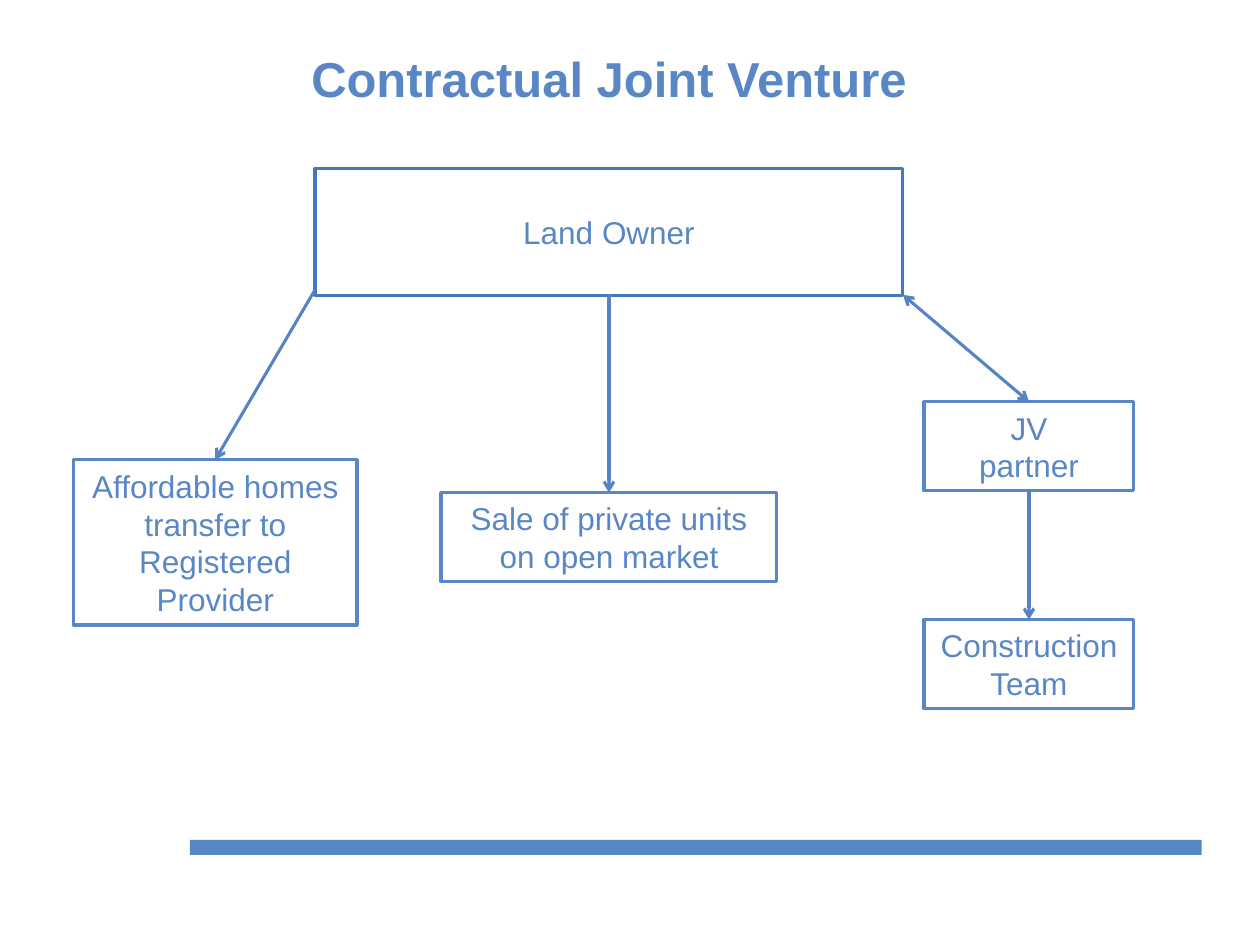
from dataclasses import dataclass
from typing import Optional

from lxml.etree import SubElement
from pptx import Presentation
from pptx.dml.color import RGBColor
from pptx.enum.shapes import MSO_CONNECTOR, MSO_SHAPE
from pptx.enum.text import MSO_ANCHOR, PP_ALIGN
from pptx.oxml.ns import qn
from pptx.util import Pt

TOP, BOTTOM = 0, 2  # connection sites of a rectangle


@dataclass(frozen=True)
class Theme:
    blue: RGBColor = RGBColor(0x59, 0x87, 0xC5)
    owner_line: RGBColor = RGBColor(0x43, 0x77, 0xBE)
    arrow: RGBColor = RGBColor(0x54, 0x84, 0xC3)
    font: str = "Arial"
    title_size: float = 28
    label_size: float = 18
    line_width: float = 1.75


THEME = Theme()


@dataclass(frozen=True)
class Node:
    label: str
    left: float
    top: float
    width: float
    height: float
    line: RGBColor = THEME.blue


@dataclass(frozen=True)
class Arrow:
    """Ends at the top of target; starts at a corner point or the source's bottom."""
    source: str
    target: str
    start: Optional[tuple[float, float]] = None
    both_ways: bool = False


NODES = {
    "owner": Node("Land Owner", 180, 96.3, 336, 72.5, THEME.owner_line),
    "sale": Node("Sale of private units on open market", 252, 281.5, 192, 50.9),
    "partner": Node("JV\vpartner", 528, 229.6, 120, 50.9),
    "team": Node("Construction Team", 528, 354, 120, 50.9),
    "homes": Node("Affordable homes transfer to Registered Provider",
                  42, 262.7, 162, 94.5),
}

ARROWS = [
    Arrow("owner", "sale"),
    Arrow("owner", "partner", start=(516, 168.5), both_ways=True),
    Arrow("partner", "team"),
    Arrow("owner", "homes", start=(180, 165.6)),
]


def write_text(box, text: str, *, size: float, bold: bool = False) -> None:
    frame = box.text_frame
    frame.word_wrap = True
    frame.vertical_anchor = MSO_ANCHOR.MIDDLE
    para = frame.paragraphs[0]
    para.text = text
    para.alignment = PP_ALIGN.CENTER
    for span in para.runs:
        span.font.name = THEME.font
        span.font.size = Pt(size)
        span.font.bold = bold
        span.font.color.rgb = THEME.blue


def add_node(page, node: Node):
    box = page.shapes.add_shape(MSO_SHAPE.RECTANGLE, Pt(node.left), Pt(node.top),
                                Pt(node.width), Pt(node.height))
    box.shadow.inherit = False
    box.fill.background()
    box.line.color.rgb = node.line
    box.line.width = Pt(THEME.line_width)
    write_text(box, node.label, size=THEME.label_size)
    return box


def add_arrow(page, arrow: Arrow, boxes: dict) -> None:
    left, top = arrow.start or (0, 0)
    line = page.shapes.add_connector(MSO_CONNECTOR.STRAIGHT, Pt(left), Pt(top),
                                     Pt(left), Pt(top))
    if arrow.start is None:
        line.begin_connect(boxes[arrow.source], BOTTOM)
    line.end_connect(boxes[arrow.target], TOP)
    line.line.color.rgb = THEME.arrow
    line.line.width = Pt(THEME.line_width)
    # Arrowheads and no shadow
    outline = line.line._get_or_add_ln()
    for end in ("a:headEnd", "a:tailEnd") if arrow.both_ways else ("a:tailEnd",):
        SubElement(outline, qn(end), type="arrow")
    SubElement(line._element.spPr, qn("a:effectLst"))


def main() -> None:
    deck = Presentation()
    deck.slide_width, deck.slide_height = Pt(720), Pt(540)
    page = deck.slides.add_slide(deck.slide_layouts[6])

    # Footer bar
    bar = page.shapes.add_shape(MSO_SHAPE.RECTANGLE, Pt(108.5), Pt(480),
                                Pt(578.2), Pt(8.6))
    bar.shadow.inherit = False
    bar.fill.solid()
    bar.fill.fore_color.rgb = THEME.blue
    bar.line.fill.background()

    # Parties and the links between them
    boxes = {key: add_node(page, node) for key, node in NODES.items()}
    for arrow in ARROWS:
        add_arrow(page, arrow, boxes)

    # Title
    title = page.shapes.add_textbox(Pt(156), Pt(24), Pt(384), Pt(41))
    write_text(title, "Contractual Joint Venture", size=THEME.title_size, bold=True)

    deck.save("out.pptx")


if __name__ == "__main__":
    main()
